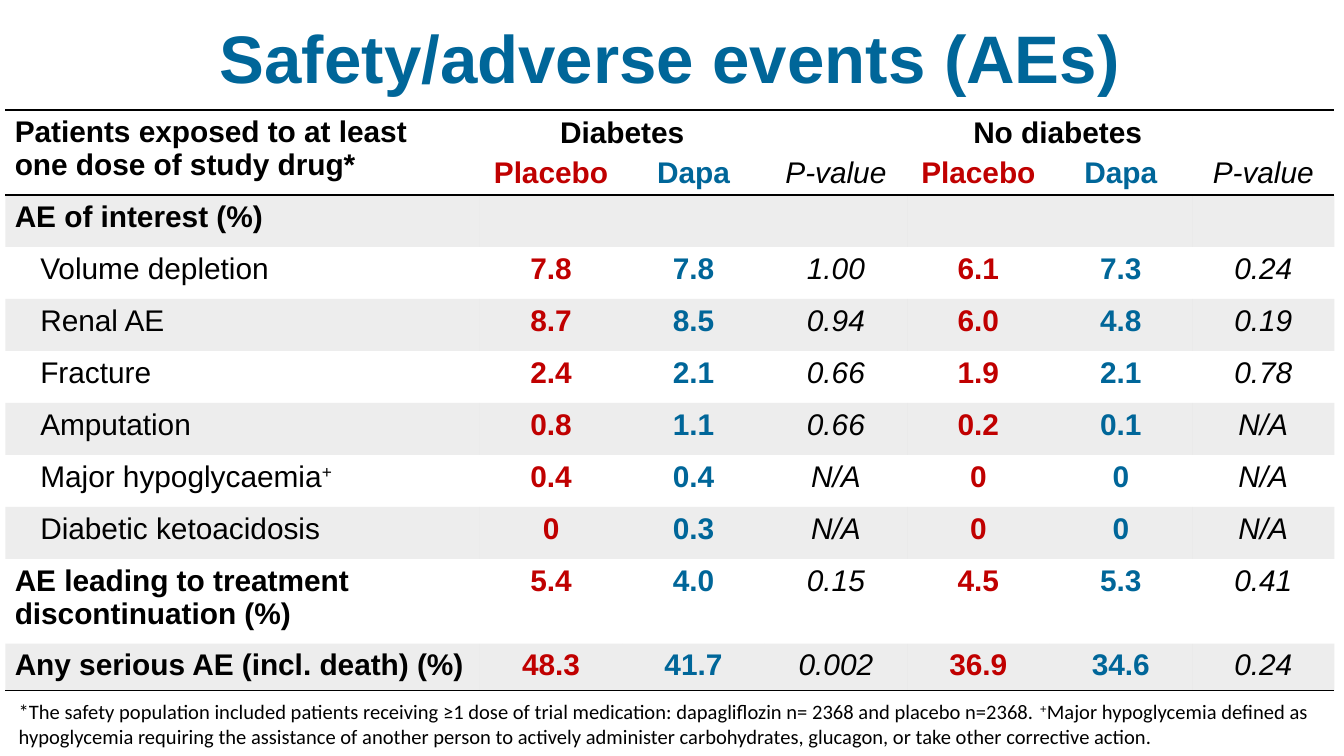
from lxml import etree
from pptx import Presentation
from pptx import util as u
from pptx.dml.color import RGBColor
from pptx.enum import text
from pptx.oxml.ns import qn

HUE = {"red": "C00000", "blue": "006699", "ink": "000000", "band": "A6A6A6"}
LEFT, MID = text.PP_ALIGN.LEFT, text.PP_ALIGN.CENTER

deck = Presentation()
deck.slide_width = u.Inches(10)
deck.slide_height = deck.slide_width * 9 // 16
wide, high = deck.slide_width, deck.slide_height
slide = deck.slides.add_slide(deck.slide_layouts[6])


def add_run(para, word, size=16, hue="ink", bold=False, slant=False, face="Arial", lift=False):
    run = para.add_run()
    run.text = word
    font = run.font
    font.name, font.size, font.bold, font.italic = face, u.Pt(size), bold, slant
    font.color.rgb = RGBColor.from_string(HUE[hue])
    if lift:
        font._element.set("baseline", "30000")


def add_box(x, y, w, h, align):
    box = slide.shapes.add_textbox(int(wide * x), int(high * y), int(wide * w), int(high * h))
    frame = box.text_frame
    frame.word_wrap = True
    frame.paragraphs[0].alignment = align
    return frame


title = add_box(0, 0, 0.997, 0.15, MID)
title.vertical_anchor = text.MSO_ANCHOR.MIDDLE
add_run(title.paragraphs[0], "Safety/adverse events (AEs)", 36, "blue", True)

heads = ["Placebo", "Dapa", "P-value"] * 2
rows = [
    ("Patients exposed to at least\none dose of study drug*", heads),
    ("AE of interest (%)", []),
    ("Volume depletion", ["7.8", "7.8", "1.00", "6.1", "7.3", "0.24"]),
    ("Renal AE", ["8.7", "8.5", "0.94", "6.0", "4.8", "0.19"]),
    ("Fracture", ["2.4", "2.1", "0.66", "1.9", "2.1", "0.78"]),
    ("Amputation", ["0.8", "1.1", "0.66", "0.2", "0.1", "N/A"]),
    ("Major hypoglycaemia+", ["0.4", "0.4", "N/A", "0", "0", "N/A"]),
    ("Diabetic ketoacidosis", ["0", "0.3", "N/A", "0", "0", "N/A"]),
    ("AE leading to treatment discontinuation (%)", ["5.4", "4.0", "0.15", "4.5", "5.3", "0.41"]),
    ("Any serious AE (incl. death) (%)", ["48.3", "41.7", "0.002", "36.9", "34.6", "0.24"]),
]
looks = [("red", True, False), ("blue", True, False), ("ink", False, True)]
last = len(rows) - 1
step = (4.32 - 2 * 0.63 - 0.35) / 7
tall = [0.63] + [step] * 7 + [0.63, 0.35]

grid = slide.shapes.add_table(len(rows), 7, u.Inches(0.04), u.Inches(0.82),
                              u.Inches(9.9), u.Inches(4.33)).table
grid.first_row = grid.horz_banding = False
style = grid._tbl.tblPr.find(qn("a:tableStyleId"))
style.text = "{2D5ABB26-0587-4C30-8999-92F81FD0307C}"
for c, col in enumerate(grid.columns):
    col.width = int(wide * (0.106 if c else 0.353))

for r, (label, vals) in enumerate(rows):
    grid.rows[r].height = u.Inches(tall[r])
    edges = {0: ["lnT", "lnB"], last: ["lnB"]}.get(r, [])
    for c in range(7):
        cell = grid.cell(r, c)
        cell.margin_left = cell.margin_right = u.Inches(0.07)
        cell.margin_top = cell.margin_bottom = u.Inches(0.04)
        para = cell.text_frame.paragraphs[0]
        if c == 0:
            item = 2 <= r <= 7
            if item:
                para._p.get_or_add_pPr().set("marL", str(u.Inches(0.19)))
            for n, line in enumerate(label.rstrip("+").split("\n")):
                if n:
                    para.add_line_break()
                add_run(para, line, bold=not item)
            if label.endswith("+"):
                add_run(para, "+", lift=True)
        elif vals:
            para.alignment = MID
            add_run(para, vals[c - 1], 16, *looks[(c - 1) % 3])
            if r == 0:
                cell.vertical_anchor = text.MSO_ANCHOR.BOTTOM
        if r % 2:
            cell.fill.solid()
            cell.fill.fore_color.rgb = RGBColor.from_string(HUE["band"])
            tint = cell._tc.tcPr.find(".//" + qn("a:srgbClr"))
            etree.SubElement(tint, qn("a:alpha"), val="20000")
        else:
            cell.fill.background()
        for n, edge in enumerate(edges):
            line = etree.Element(qn("a:" + edge), w=str(u.Pt(1)))
            paint = etree.SubElement(line, qn("a:solidFill"))
            etree.SubElement(paint, qn("a:srgbClr"), val=HUE["ink"])
            cell._tc.tcPr.insert(n, line)

note = add_box(0.004, 0.916, 0.991, 0.084, LEFT).paragraphs[0]
add_run(note, "*The safety population included patients receiving ≥1 dose of trial medication: "
        "dapagliflozin n= 2368 and placebo n=2368. ", 11, face="Calibri")
add_run(note, "+", 11, lift=True)
add_run(note, "Major hypoglycemia defined as hypoglycemia requiring the assistance of another person "
        "to actively administer carbohydrates, glucagon, or take other corrective action.",
        11, face="Calibri")

for x, group in [(0.359, "Diabetes"), (0.683, "No diabetes")]:
    add_run(add_box(x, 0.142, 0.208, 0.066, MID).paragraphs[0], group, bold=True)

deck.save("out.pptx")
